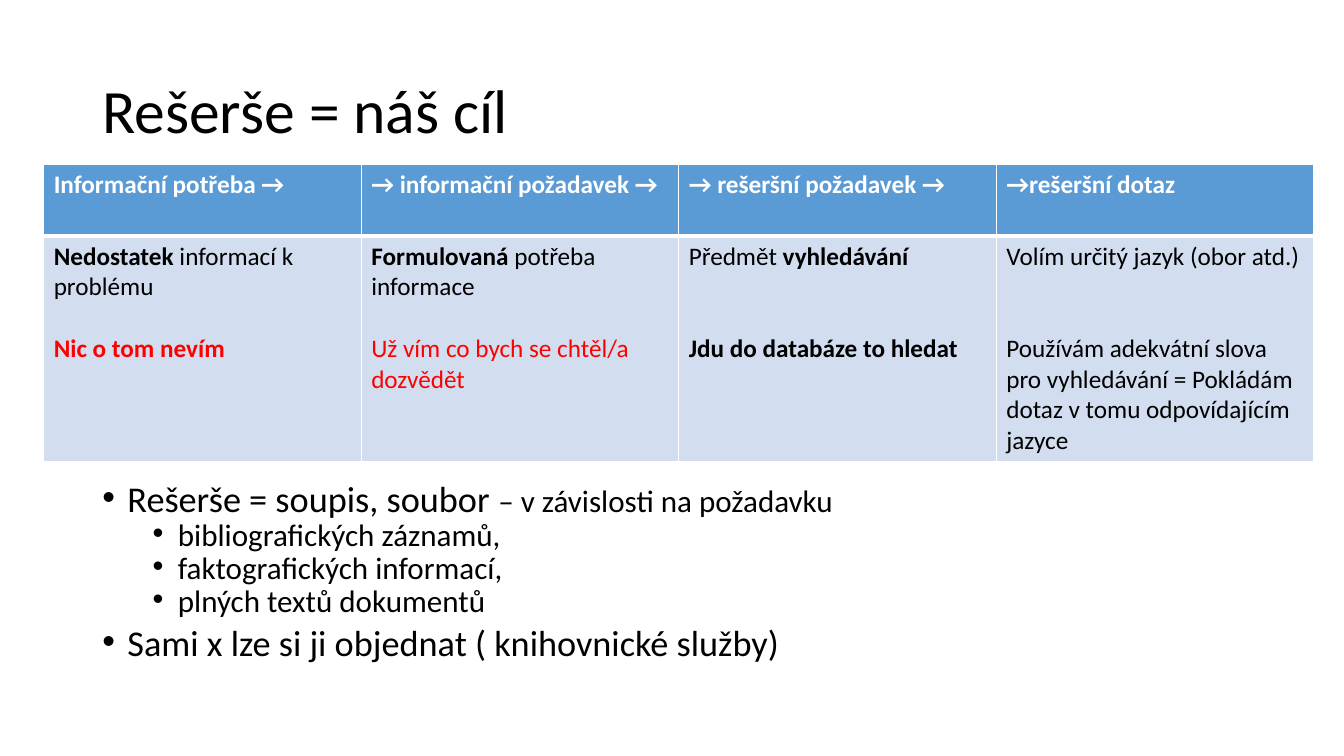
from dataclasses import dataclass

from lxml.etree import SubElement
from pptx import Presentation
from pptx.dml.color import RGBColor as RGB
from pptx.enum.text import MSO_ANCHOR as Anchor
from pptx.oxml import parse_xml
from pptx.oxml.ns import nsdecls, qn
from pptx.util import Pt


@dataclass(frozen=True)
class Theme:
    font: str = "Calibri"
    black: str = "000000"
    white: str = "FFFFFF"
    red: str = "FF0000"
    header: str = "5B9BD5"
    body: str = "D2DEEF"
    title_size: float = 44
    main_size: float = 25.9
    sub_size: float = 22.2
    table_size: float = 18


theme = Theme()


def add_runs(paragraph, pieces, size, color):
    """Each piece is (text, format values that differ from plain)."""
    for text, changes in pieces:
        look = {"size": size, "bold": False, "color": color, **changes}
        run = paragraph.add_run()
        run.text = text
        run.font.color.rgb = RGB.from_string(look.pop("color"))
        look.update(name=theme.font, size=Pt(look["size"]))
        for attribute, value in look.items():
            setattr(run.font, attribute, value)


def add_text_frame(left, top, width, height, anchor):
    frame = slide.shapes.add_textbox(Pt(left), Pt(top), Pt(width), Pt(height)).text_frame
    frame.word_wrap = True
    frame.vertical_anchor = anchor
    return frame


deck = Presentation()
deck.slide_width, deck.slide_height = Pt(960), Pt(540)
slide = deck.slides.add_slide(deck.slide_layouts[6])

# Title
heading = add_text_frame(66, 28.8, 828, 104.4, Anchor.MIDDLE).paragraphs[0]
heading.line_spacing = 0.9
add_runs(heading, [("Rešerše = náš cíl", {})], theme.title_size, theme.black)

# Bulleted list: marker indent, space before, pieces
main, sub = (18, 10), (54, 5)
small = {"size": theme.sub_size}
points = [
    (main, [("Rešerše = soupis, soubor ", {}), ("– v závislosti na požadavku", small)]),
    (sub, [("bibliografických záznamů,", small)]),
    (sub, [("faktografických informací,", small)]),
    (sub, [("plných textů dokumentů", small)]),
    (main, [("Sami x lze si ji objednat ( knihovnické služby)", {})]),
]
point_list = add_text_frame(66, 345, 828, 142, Anchor.TOP)
for number, ((indent, gap), pieces) in enumerate(points):
    point = point_list.add_paragraph() if number else point_list.paragraphs[0]
    point.line_spacing = 0.7
    point.space_before = Pt(gap if number else 0)
    add_runs(point, pieces, theme.main_size, theme.black)
    margins = point._p.get_or_add_pPr()
    margins.set("marL", str(Pt(indent)))
    margins.set("indent", str(Pt(-18)))
    SubElement(margins, qn("a:buFont"), typeface="Arial")
    SubElement(margins, qn("a:buChar"), char="•")

# Table of stages: header, meaning, note, space above the note
bold = {"bold": True}
stages = [
    ("Informační potřeba →",
     [("Nedostatek", bold), (" informací k problému", {})],
     ("Nic o tom nevím", {"bold": True, "color": theme.red}), 22),
    ("→ informační požadavek →",
     [("Formulovaná", bold), (" potřeba informace", {})],
     ("Už vím co bych se chtěl/a dozvědět", {"color": theme.red}), 22),
    ("→ rešeršní požadavek →",
     [("Předmět ", {}), ("vyhledávání", bold)],
     ("Jdu do databáze to hledat", bold), 44),
    ("→rešeršní dotaz",
     [("Volím určitý jazyk (obor atd.)", {})],
     ("Používám adekvátní slova pro vyhledávání = Pokládám dotaz "
      "v tomu odpovídajícím jazyce", {}), 44),
]
stage_table = slide.shapes.add_table(
    2, len(stages), Pt(31.2), Pt(117.6), Pt(907.2), Pt(212)).table
stage_table.rows[0].height, stage_table.rows[1].height = Pt(51), Pt(161)

for column, (stage, meaning, note, note_gap) in enumerate(stages):
    stage_table.columns[column].width = Pt(226.8)
    header, body = (stage_table.cell(row, column) for row in range(2))
    add_runs(header.text_frame.paragraphs[0], [(stage, bold)],
             theme.table_size, theme.white)
    add_runs(body.text_frame.paragraphs[0], meaning, theme.table_size, theme.black)
    remark = body.text_frame.add_paragraph()
    remark.space_before = Pt(note_gap)
    add_runs(remark, [note], theme.table_size, theme.black)

    # Fills and white rules, with a thick one under the header
    for cell, fill, bottom in ((header, theme.header, 3), (body, theme.body, 1)):
        cell.fill.solid()
        cell.fill.fore_color.rgb = RGB.from_string(fill)
        top = 1 if cell is header else 3
        borders = {"lnL": 1, "lnR": 1, "lnT": top, "lnB": bottom}
        for position, (side, width) in enumerate(borders.items()):
            cell._tc.get_or_add_tcPr().insert(position, parse_xml(
                f'<a:{side} {nsdecls("a")} w="{Pt(width)}"><a:solidFill>'
                f'<a:srgbClr val="{theme.white}"/></a:solidFill></a:{side}>'))

deck.save("out.pptx")
